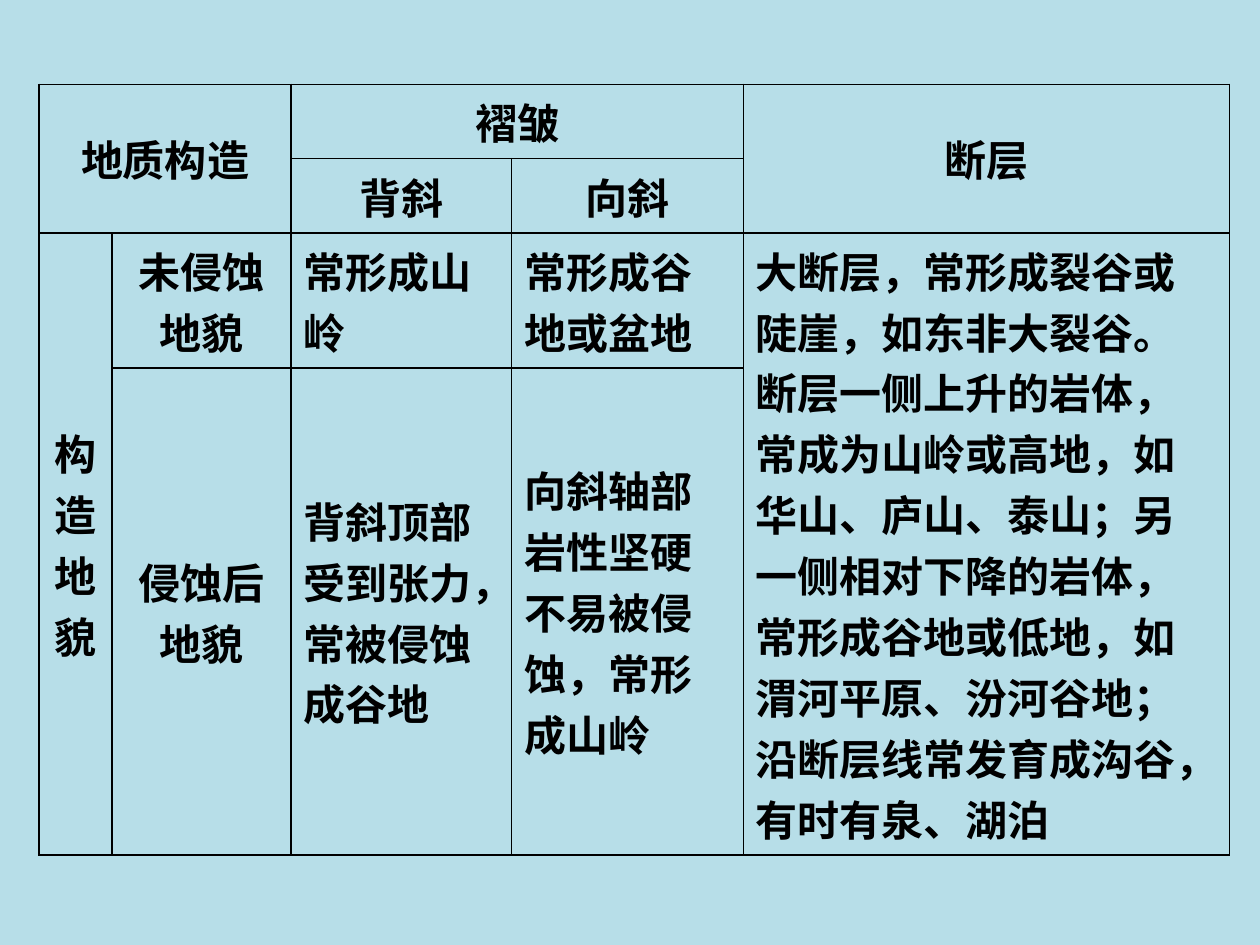
from dataclasses import dataclass

import pptx
import pptx.dml.color
import pptx.enum.text
import pptx.oxml.ns
import pptx.table
import pptx.util
from lxml import etree

Inches = pptx.util.Inches
Pt = pptx.util.Pt
RGBColor = pptx.dml.color.RGBColor
Align = pptx.enum.text.PP_ALIGN

BLACK = RGBColor(0x00, 0x00, 0x00)
PALE_BLUE = RGBColor(0xB7, 0xDE, 0xE8)
COLUMN_WIDTHS = (0.58, 1.42, 1.75, 1.84, 3.86)
ROW_HEIGHTS = (0.59, 0.59, 1.07, 3.8)


@dataclass(frozen=True)
class Entry:
    row: int
    column: int
    text: str
    alignment: Align = Align.CENTER
    row_span: int = 1
    column_span: int = 1


ENTRIES = (
    Entry(0, 0, "地质构造", row_span=2, column_span=2),
    Entry(0, 2, "褶皱", column_span=2),
    Entry(0, 4, "断层", row_span=2),
    Entry(1, 2, "背斜"),
    Entry(1, 3, "向斜"),
    Entry(2, 0, "构造地貌", row_span=2),
    Entry(2, 1, "未侵蚀地貌"),
    Entry(2, 2, "常形成山岭", Align.LEFT),
    Entry(2, 3, "常形成谷地或盆地", Align.LEFT),
    Entry(
        2,
        4,
        "大断层，常形成裂谷或陡崖，如东非大裂谷。断层一侧上升的岩体，"
        "常成为山岭或高地，如华山、庐山、泰山；另一侧相对下降的岩体，"
        "常形成谷地或低地，如渭河平原、汾河谷地；沿断层线常发育成沟谷，"
        "有时有泉、湖泊",
        Align.LEFT,
        row_span=2,
    ),
    Entry(3, 1, "侵蚀后地貌"),
    Entry(3, 2, "背斜顶部受到张力，常被侵蚀成谷地", Align.LEFT),
    Entry(3, 3, "向斜轴部岩性坚硬不易被侵蚀，常形成山岭", Align.LEFT),
)


def style_cell(cell: pptx.table._Cell) -> None:
    qualified = pptx.oxml.ns.qn
    properties = cell._tc.get_or_add_tcPr()
    for side in ("a:lnL", "a:lnR", "a:lnT", "a:lnB"):
        line = etree.SubElement(properties, qualified(side), w=str(Pt(1)))
        fill = etree.SubElement(line, qualified("a:solidFill"))
        etree.SubElement(fill, qualified("a:srgbClr"), val=str(BLACK))
    cell.fill.background()


def write_entry(table: pptx.table.Table, entry: Entry) -> None:
    cell = table.cell(entry.row, entry.column)
    if entry.row_span > 1 or entry.column_span > 1:
        cell.merge(
            table.cell(
                entry.row + entry.row_span - 1,
                entry.column + entry.column_span - 1,
            )
        )
    cell.text = entry.text
    cell.vertical_anchor = pptx.enum.text.MSO_ANCHOR.MIDDLE
    paragraph = cell.text_frame.paragraphs[0]
    paragraph.alignment = entry.alignment
    paragraph.font.name = "Times New Roman"
    paragraph.font.size = Pt(24)
    paragraph.font.bold = True
    paragraph.font.color.rgb = BLACK


def main() -> None:
    presentation = pptx.Presentation()
    presentation.slide_width = Inches(10)
    presentation.slide_height = Inches(7.5)
    slide = presentation.slides.add_slide(presentation.slide_layouts[6])
    slide.background.fill.solid()
    slide.background.fill.fore_color.rgb = PALE_BLUE

    table = slide.shapes.add_table(
        len(ROW_HEIGHTS),
        len(COLUMN_WIDTHS),
        Inches(0.31),
        Inches(0.67),
        Inches(sum(COLUMN_WIDTHS)),
        Inches(sum(ROW_HEIGHTS)),
    ).table
    table.first_row = False
    table.horz_banding = False
    for column, width in zip(table.columns, COLUMN_WIDTHS):
        column.width = Inches(width)
    for row, height in zip(table.rows, ROW_HEIGHTS):
        row.height = Inches(height)
    for cell in table.iter_cells():
        style_cell(cell)
    for entry in ENTRIES:
        write_entry(table, entry)

    presentation.save("out.pptx")


if __name__ == "__main__":
    main()
